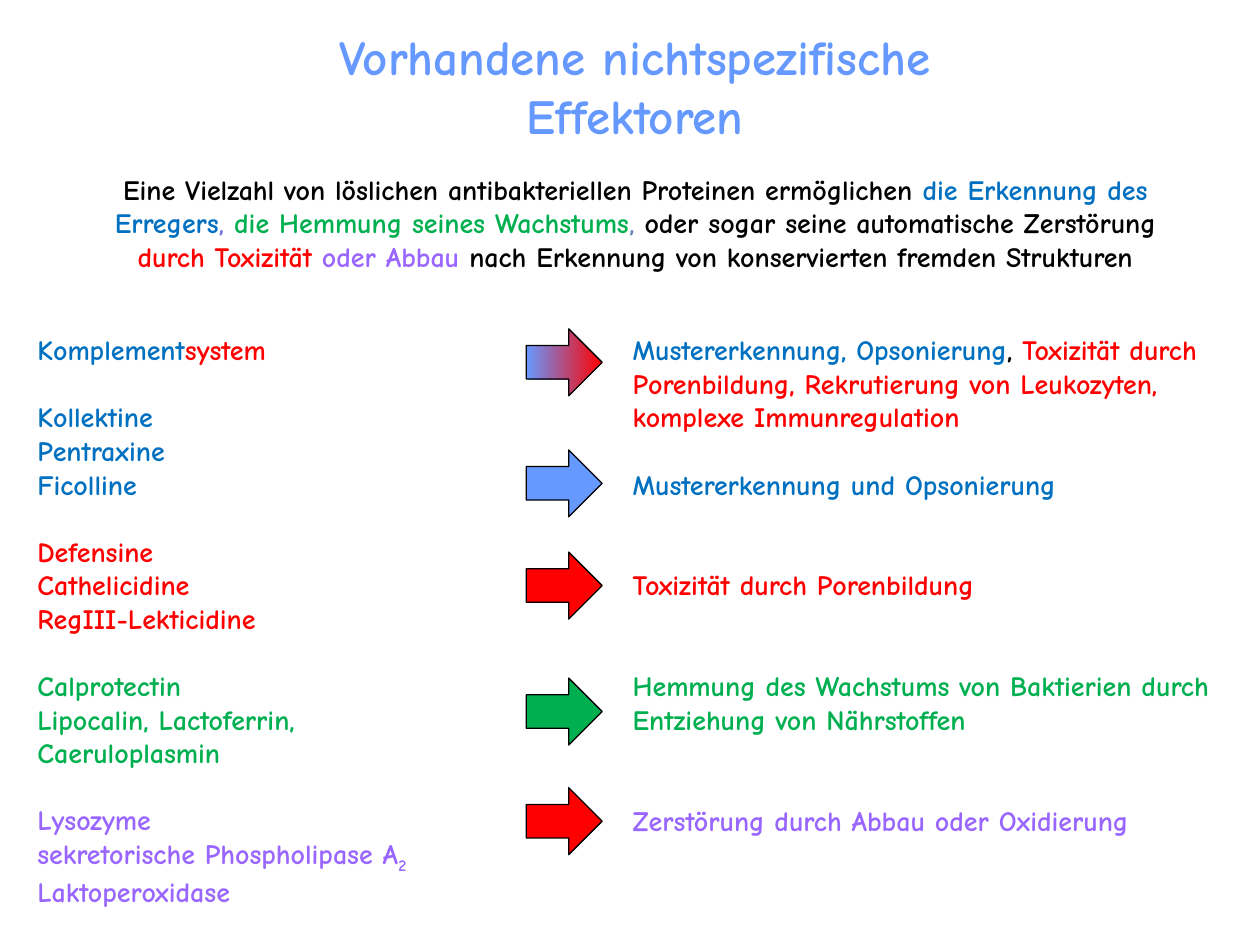
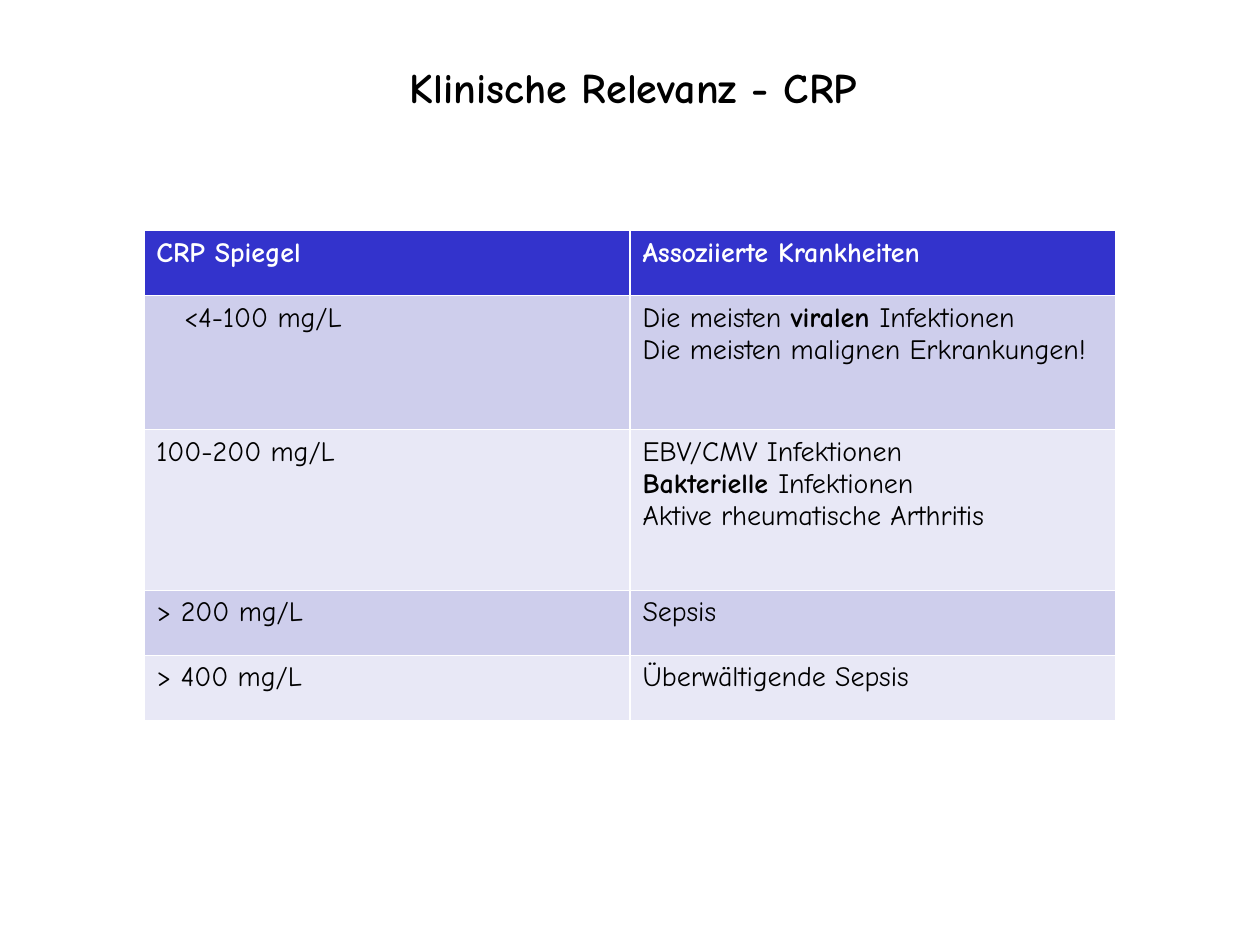
"""Build two slides on soluble antibacterial effectors and the clinical relevance of CRP."""
from dataclasses import dataclass

from lxml.etree import SubElement
from pptx import Presentation
from pptx.dml.color import RGBColor
from pptx.enum.shapes import MSO_SHAPE
from pptx.enum.text import MSO_ANCHOR, MSO_AUTO_SIZE, PP_ALIGN
from pptx.oxml.ns import qn
from pptx.util import Cm, Pt


@dataclass(frozen=True)
class Theme:
    """Hold the colours, font and type sizes that both slides share."""
    font: str = "Comic Neue"
    black: str = "000000"
    white: str = "FFFFFF"
    sky: str = "6699FF"
    blue: str = "0070C0"
    red: str = "FF0000"
    green: str = "00B050"
    violet: str = "9966FF"
    lavender: str = "7878DE"
    slate: str = "6D86B9"
    header: str = "3333CC"
    bands: tuple = ("CECEEC", "E8E8F6")
    large: int = 28
    medium: int = 24
    body: int = 16
    blank_line: float = 19.2


THEME = Theme()

EFFECTOR_TITLE = "Vorhandene nichtspezifische Effektoren"
INTRO = [
    ("Eine Vielzahl von löslichen antibakteriellen Proteinen ermöglichen ", THEME.black),
    ("die Erkennung des Erregers", THEME.blue),
    (", ", THEME.lavender),
    ("die Hemmung seines Wachstums", THEME.green),
    (", ", THEME.slate),
    ("oder sogar seine automatische Zerstörung ", THEME.black),
    ("durch Toxizität ", THEME.red),
    ("oder Abbau ", THEME.violet),
    ("nach Erkennung von konservierten fremden Strukturen", THEME.black),
]
EFFECTORS = [
    {
        "names": [[("Komplement", THEME.blue), ("system", THEME.red)]],
        "effect": [
            ("Mustererkennung, Opsonierung", THEME.blue),
            (", ", THEME.black),
            ("Toxizität durch Porenbildung, Rekrutierung von Leukozyten, "
             "komplexe Immunregulation", THEME.red),
        ],
        "blank_lines": 0, "arrow_top": 6.63, "arrow_fill": (THEME.sky, THEME.red),
    },
    {
        "names": [[(name, THEME.blue)] for name in ("Kollektine", "Pentraxine", "Ficolline")],
        "effect": [("Mustererkennung und Opsonierung", THEME.blue)],
        "blank_lines": 1, "arrow_top": 9.07, "arrow_fill": (THEME.sky,),
    },
    {
        "names": [[(name, THEME.red)]
                  for name in ("Defensine", "Cathelicidine", "RegIII-Lekticidine")],
        "effect": [("Toxizität durch Porenbildung", THEME.red)],
        "blank_lines": 2, "arrow_top": 11.13, "arrow_fill": (THEME.red,),
    },
    {
        "names": [[(name, THEME.green)]
                  for name in ("Calprotectin", "Lipocalin, Lactoferrin,", "Caeruloplasmin")],
        "effect": [("Hemmung des Wachstums von Baktierien durch Entziehung von Nährstoffen",
                    THEME.green)],
        "blank_lines": 2, "arrow_top": 13.67, "arrow_fill": (THEME.green,),
    },
    {
        "names": [
            [("Lysozyme", THEME.violet)],
            [("sekretorische Phospholipase A", THEME.violet), ("2", THEME.violet, "subscript")],
            [("Laktoperoxidase", THEME.violet)],
        ],
        "effect": [("Zerstörung durch Abbau oder Oxidierung", THEME.violet)],
        "blank_lines": 2, "arrow_top": 15.88, "arrow_fill": (THEME.red,),
    },
]

CRP_TITLE = "Klinische Relevanz - CRP"
CRP_HEADER = ("CRP Spiegel", "Assoziierte Krankheiten")
CRP_LEVELS = [
    ("<4-100 mg/L", ["Die meisten viralen Infektionen", "Die meisten malignen Erkrankungen!"]),
    ("100-200 mg/L", ["EBV/CMV Infektionen", "Bakterielle Infektionen",
                      "Aktive rheumatische Arthritis"]),
    ("> 200 mg/L", ["Sepsis"]),
    ("> 400 mg/L", ["Überwältigende Sepsis"]),
]
EMPHASIS = ("viralen ", "Bakterielle ")
CRP_ROW_HEIGHTS = (1.31, 2.7, 3.24, 1.31, 1.31)
CRP_COLUMN_WIDTH = 9.8
FIRST_LEVEL_INDENT = 0.56


def place(shape, left, top, width, height):
    """Move and size a shape, in centimetres."""
    shape.left, shape.top = Cm(left), Cm(top)
    shape.width, shape.height = Cm(width), Cm(height)


def style(span, colour, size=THEME.body, bold=True):
    """Give a run the shared font."""
    span.font.name = THEME.font
    span.font.size = Pt(size)
    span.font.bold = bold
    span.font.color.rgb = RGBColor.from_string(colour)


def write_spans(para, spans):
    """Fill a paragraph with coloured runs."""
    for text, colour, *marks in spans:
        span = para.add_run()
        span.text = text
        style(span, colour)
        if "subscript" in marks:
            span.font._element.set("baseline", "-25000")


def set_title(page, text, bounds, size, colour):
    """Write and place the slide title."""
    title = page.shapes.title
    place(title, *bounds)
    frame = title.text_frame
    frame.text = text
    frame.auto_size = MSO_AUTO_SIZE.NONE
    frame.vertical_anchor = MSO_ANCHOR.MIDDLE
    frame.paragraphs[0].alignment = PP_ALIGN.CENTER
    style(frame.paragraphs[0].runs[0], colour, size)


def fill_list(body, bounds, lines):
    """Write (runs, blank lines before) pairs as a list without bullets."""
    place(body, *bounds)
    frame = body.text_frame
    frame.auto_size = MSO_AUTO_SIZE.NONE
    for index, (spans, blank_lines) in enumerate(lines):
        para = frame.add_paragraph() if index else frame.paragraphs[0]
        para.space_before = Pt(blank_lines * THEME.blank_line)
        properties = para._p.get_or_add_pPr()
        properties.set("marL", "0")
        properties.set("indent", "0")
        SubElement(properties, qn("a:buNone"))
        write_spans(para, spans)


def add_arrow(page, top, colours):
    """Draw an outlined arrow with a plain or a two-colour fill."""
    arrow = page.shapes.add_shape(MSO_SHAPE.RIGHT_ARROW, Cm(10.61), Cm(top), Cm(1.53), Cm(1.35))
    arrow.shadow.inherit = False
    arrow.line.color.rgb = RGBColor.from_string(THEME.black)
    arrow.line.width = Pt(0.75)
    if len(colours) == 1:
        arrow.fill.solid()
        arrow.fill.fore_color.rgb = RGBColor.from_string(colours[0])
        return
    arrow.fill.gradient()
    arrow.fill.gradient_angle = 0
    for stop, colour, position in zip(arrow.fill.gradient_stops, colours, (0, 1)):
        stop.color.rgb = RGBColor.from_string(colour)
        stop.position = position


def build_effectors(deck):
    """Add the slide that pairs effectors with their effects."""
    page = deck.slides.add_slide(deck.slide_layouts.get_by_name("Two Content"))
    set_title(page, EFFECTOR_TITLE, (4.7, 0.33, 16.2, 2.77), THEME.large, THEME.sky)
    intro = page.shapes.add_textbox(Cm(1.9), Cm(3.35), Cm(21.82), Cm(3))
    intro.text_frame.word_wrap = True
    intro.text_frame.paragraphs[0].alignment = PP_ALIGN.CENTER
    write_spans(intro.text_frame.paragraphs[0], INTRO)

    names = [(spans, 1 if group and not line else 0)
             for group, effector in enumerate(EFFECTORS)
             for line, spans in enumerate(effector["names"])]
    effects = [(effector["effect"], effector["blank_lines"]) for effector in EFFECTORS]
    _, names_body, effects_body = page.placeholders
    fill_list(names_body, (0.5, 6.58, 11.1, 12.2), names)
    fill_list(effects_body, (12.5, 6.58, 12.3, 11.9), effects)
    for effector in EFFECTORS:
        add_arrow(page, effector["arrow_top"], effector["arrow_fill"])


def split_emphasis(line):
    """Split a line into (text, bold) parts around an emphasised word."""
    for word in EMPHASIS:
        if word in line:
            before, after = line.split(word)
            return [part for part in ((before, False), (word, True), (after, False)) if part[0]]
    return [(line, False)]


def fill_cell(cell, lines, fill, colour, header=False):
    """Write the lines of a cell and colour it."""
    cell.fill.solid()
    cell.fill.fore_color.rgb = RGBColor.from_string(fill)
    for index, line in enumerate(lines):
        para = cell.text_frame.add_paragraph() if index else cell.text_frame.paragraphs[0]
        for text, bold in split_emphasis(line):
            span = para.add_run()
            span.text = text
            style(span, colour, bold=header or bold)


def build_crp(deck):
    """Add the slide with the table of CRP levels."""
    page = deck.slides.add_slide(deck.slide_layouts.get_by_name("Title Only"))
    set_title(page, CRP_TITLE, (5.82, 1.12, 13.9, 1.27), THEME.medium, THEME.black)
    table = page.shapes.add_table(
        len(CRP_ROW_HEIGHTS), len(CRP_HEADER), Cm(2.9), Cm(4.65),
        Cm(CRP_COLUMN_WIDTH * len(CRP_HEADER)), Cm(sum(CRP_ROW_HEIGHTS))).table
    for row, height in zip(table.rows, CRP_ROW_HEIGHTS):
        row.height = Cm(height)
    for column, heading in enumerate(CRP_HEADER):
        fill_cell(table.cell(0, column), [heading], THEME.header, THEME.white, header=True)
    for row, (level, diseases) in enumerate(CRP_LEVELS, start=1):
        band = THEME.bands[(row - 1) % 2]
        fill_cell(table.cell(row, 0), [level], band, THEME.black)
        fill_cell(table.cell(row, 1), diseases, band, THEME.black)
    first_level = table.cell(1, 0).text_frame.paragraphs[0]
    first_level._p.get_or_add_pPr().set("marL", str(Cm(FIRST_LEVEL_INDENT)))


def main():
    """Build and save the deck."""
    deck = Presentation()
    deck.slide_width, deck.slide_height = Cm(25.4), Cm(19.05)
    build_effectors(deck)
    build_crp(deck)
    deck.save("out.pptx")


if __name__ == "__main__":
    main()
